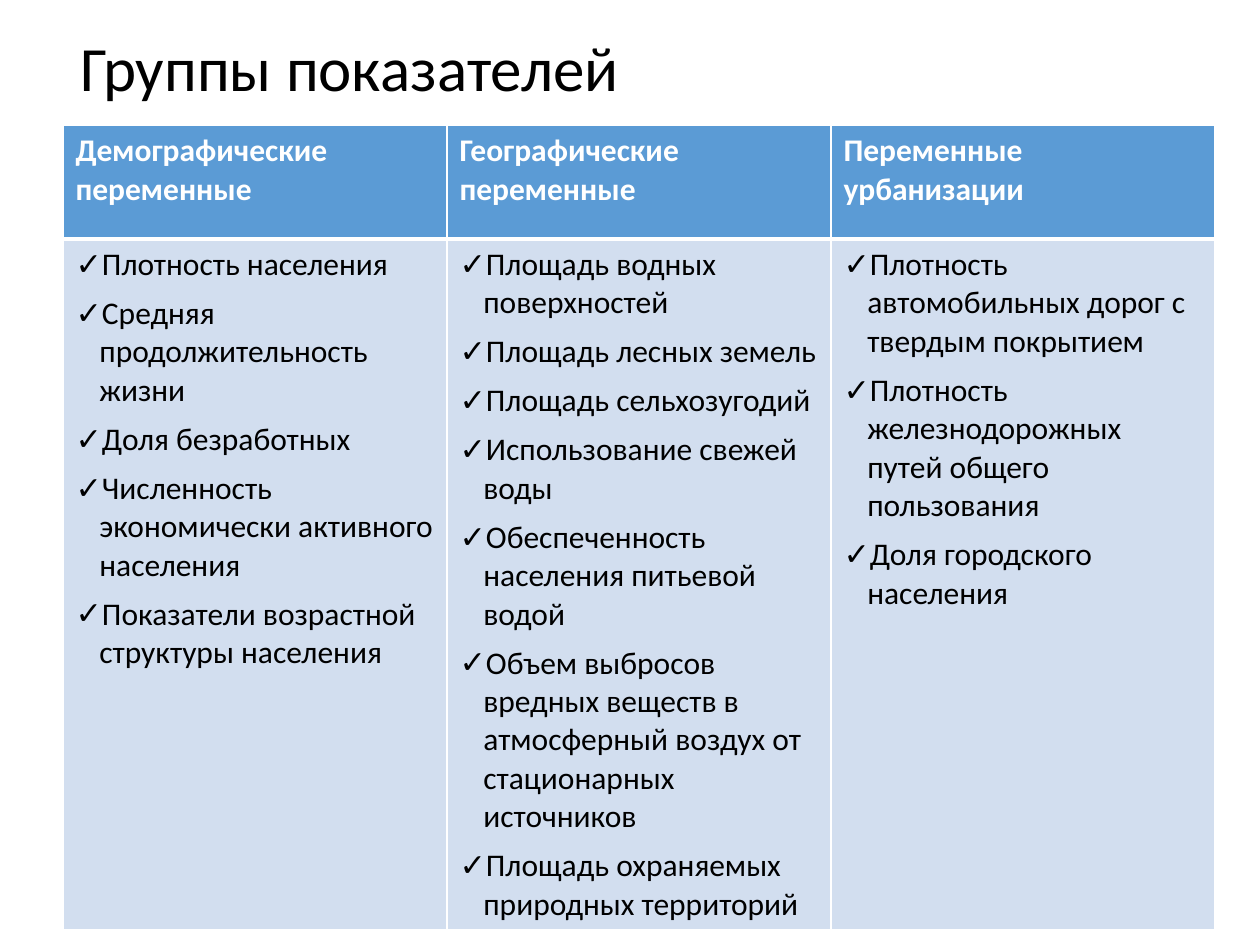
from dataclasses import dataclass

from lxml.etree import SubElement
from pptx import Presentation
from pptx.dml.color import RGBColor
from pptx.enum.text import MSO_ANCHOR, MSO_AUTO_SIZE, PP_ALIGN
from pptx.oxml import parse_xml
from pptx.oxml.ns import nsdecls, qn
from pptx.util import Cm, Pt


@dataclass(frozen=True)
class Theme:
    font: str = "Calibri"
    title_size: int = 36
    table_size: int = 18
    text: str = "000000"
    white: str = "FFFFFF"
    header_fill: str = "5B9BD5"
    body_fill: str = "D2DEEF"


theme = Theme()

GROUPS = {
    "Демографические переменные": [
        "Плотность населения",
        "Средняя продолжительность жизни",
        "Доля безработных",
        "Численность экономически активного населения",
        "Показатели возрастной структуры населения",
    ],
    "Географические переменные": [
        "Площадь водных поверхностей",
        "Площадь лесных земель",
        "Площадь сельхозугодий",
        "Использование свежей воды",
        "Обеспеченность населения питьевой водой",
        "Объем выбросов вредных веществ в атмосферный воздух от стационарных источников",
        "Площадь охраняемых природных территорий",
    ],
    "Переменные урбанизации": [
        "Плотность автомобильных дорог с твердым покрытием",
        "Плотность железнодорожных путей общего пользования",
        "Доля городского населения",
    ],
}


def style_text(paragraph, size, color, bold=False):
    for run in paragraph.runs:
        run.font.name = theme.font
        run.font.size = Pt(size)
        run.font.bold = bold
        run.font.color.rgb = RGBColor.from_string(color)


def style_cell(cell, fill, bottom):
    """Fill a cell and draw white borders, with the bottom width in points."""
    cell.fill.solid()
    cell.fill.fore_color.rgb = RGBColor.from_string(fill)
    properties = cell._tc.get_or_add_tcPr()
    widths = {"lnL": 1, "lnR": 1, "lnT": 1, "lnB": bottom}
    for position, (side, width) in enumerate(widths.items()):
        properties.insert(position, parse_xml(
            f'<a:{side} {nsdecls("a")} w="{Pt(width)}"><a:solidFill>'
            f'<a:srgbClr val="{theme.white}"/></a:solidFill></a:{side}>'))


presentation = Presentation()
presentation.slide_width, presentation.slide_height = Cm(25.4), Cm(19.05)
slide = presentation.slides.add_slide(presentation.slide_layouts[5])

# Title
title = slide.shapes.title
title.left, title.top, title.width, title.height = Cm(1.37), Cm(0.93), Cm(12.85), Cm(1)
title.text_frame.text = "Группы показателей"
title.text_frame.auto_size = MSO_AUTO_SIZE.NONE
title.text_frame.vertical_anchor = MSO_ANCHOR.MIDDLE
heading = title.text_frame.paragraphs[0]
heading.alignment = PP_ALIGN.LEFT
heading.line_spacing = 0.9
style_text(heading, theme.title_size, theme.text)

# Table grid
table = slide.shapes.add_table(
    2, len(GROUPS), Cm(1.27), Cm(2.53), Cm(23.22), Cm(14.91)).table
for row, height in zip(table.rows, (2.29, 12.62)):
    row.height = Cm(height)

# One column per group: header above a check list
for column, (group, indicators) in enumerate(GROUPS.items()):
    header, body = table.cell(0, column), table.cell(1, column)
    style_cell(header, theme.header_fill, bottom=3)
    style_cell(body, theme.body_fill, bottom=1)

    header.text_frame.text = group
    style_text(header.text_frame.paragraphs[0], theme.table_size, theme.white, bold=True)

    body.text_frame.text = "\n".join(indicators)
    for paragraph in body.text_frame.paragraphs:
        paragraph.space_before = Pt(6)
        style_text(paragraph, theme.table_size, theme.text)
        properties = paragraph._p.get_or_add_pPr()
        properties.set("marL", str(Cm(0.48)))
        properties.set("indent", str(-Cm(0.48)))
        SubElement(properties, qn("a:buFont")).set("typeface", theme.font)
        SubElement(properties, qn("a:buChar")).set("char", "✓")

presentation.save("out.pptx")
